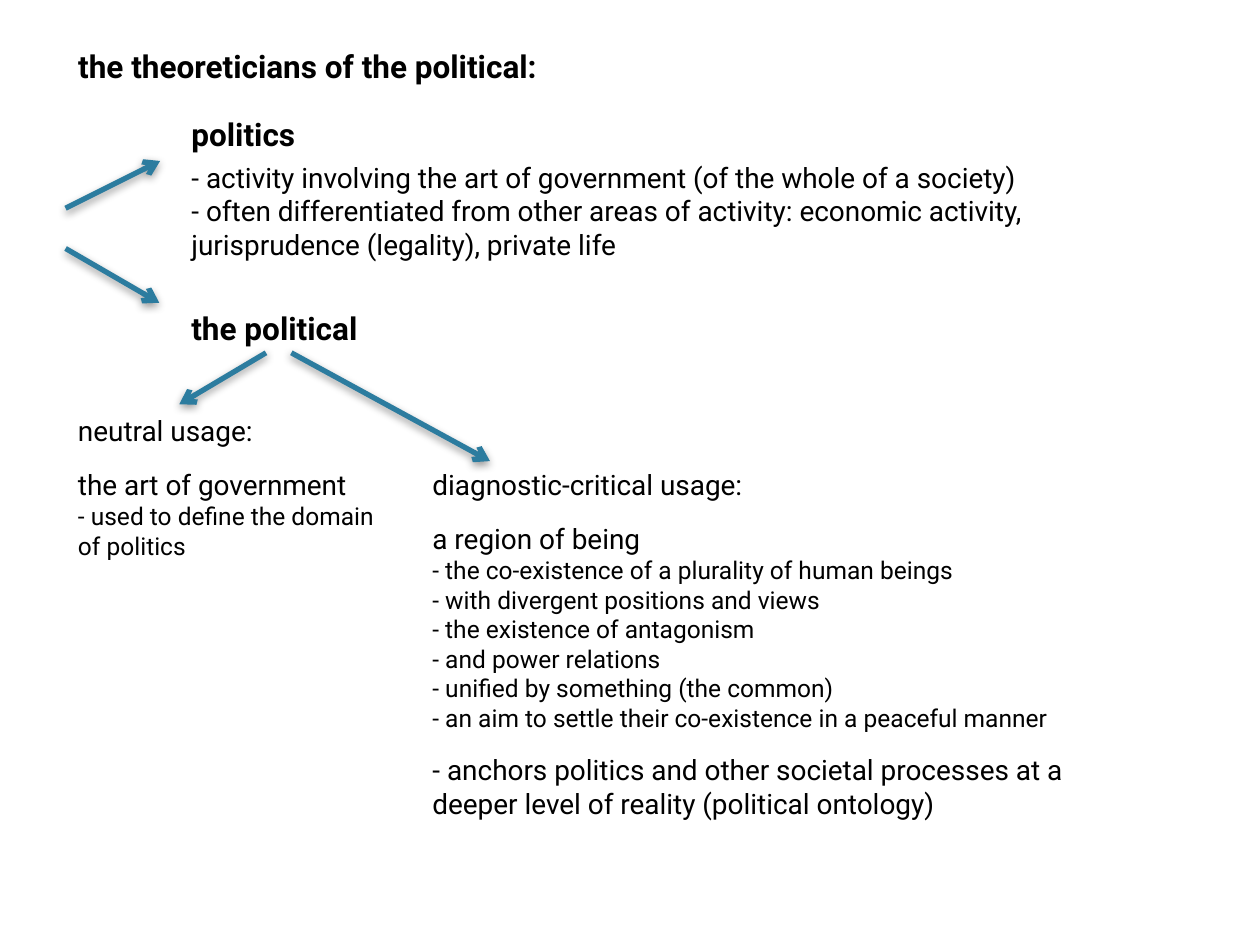
import pptx
import pptx.dml.color
import pptx.enum.shapes
import pptx.enum.text
import pptx.oxml
import pptx.oxml.ns
import pptx.util

Pt = pptx.util.Pt
BLACK = pptx.dml.color.RGBColor(0x00, 0x00, 0x00)
BLUE = pptx.dml.color.RGBColor(0x2C, 0x7C, 0x9F)
FONT = "Roboto"
HEADING, BODY, DETAIL = 18, 16, 14
GROUP_GAP = 12

TITLE_ONLY = 5
LEFT, INDENTED, RIGHT = 37.5, 102.3, 240

ARROW_SHADOW = (
    '<a:effectLst %s><a:outerShdw blurRad="%d" dist="%d" dir="5400000" rotWithShape="0">'
    '<a:srgbClr val="000000"><a:alpha val="40000"/></a:srgbClr>'
    '</a:outerShdw></a:effectLst>' % (pptx.oxml.ns.nsdecls("a"), Pt(5), Pt(2))
)
ARROW_HEAD = '<a:tailEnd %s type="arrow"/>' % pptx.oxml.ns.nsdecls("a")


def fill_text(shape, lines, bold=False):
    """Write (text, size, space before) lines into a shape."""
    text_frame = shape.text_frame
    text_frame.text = "\n".join(text for text, size, gap in lines)
    text_frame.word_wrap = True
    text_frame.auto_size = pptx.enum.text.MSO_AUTO_SIZE.SHAPE_TO_FIT_TEXT
    text_frame.vertical_anchor = pptx.enum.text.MSO_ANCHOR.TOP
    for paragraph, (text, size, gap) in zip(text_frame.paragraphs, lines):
        paragraph.alignment = pptx.enum.text.PP_ALIGN.LEFT
        paragraph.space_before = Pt(gap)
        font = paragraph.runs[0].font
        font.name = FONT
        font.size = Pt(size)
        font.bold = bold
        font.color.rgb = BLACK


def set_title(slide, text, left, top, width, height):
    title = slide.shapes.title
    title.left, title.top = Pt(left), Pt(top)
    title.width, title.height = Pt(width), Pt(height)
    fill_text(title, [(text, HEADING, 0)], bold=True)


def add_text(slide, lines, left, top, width, height, bold=False):
    shape = slide.shapes.add_textbox(Pt(left), Pt(top), Pt(width), Pt(height))
    fill_text(shape, lines, bold)


def add_arrow(slide, start, end):
    connector = slide.shapes.add_connector(
        pptx.enum.shapes.MSO_CONNECTOR.STRAIGHT,
        Pt(start[0]), Pt(start[1]), Pt(end[0]), Pt(end[1]))
    connector.line.color.rgb = BLUE
    connector.line.width = Pt(3)
    connector.line._get_or_add_ln().append(pptx.oxml.parse_xml(ARROW_HEAD))
    connector._element.spPr.append(pptx.oxml.parse_xml(ARROW_SHADOW))


def main():
    presentation = pptx.Presentation()
    presentation.slide_width, presentation.slide_height = Pt(720), Pt(540)
    slide = presentation.slides.add_slide(presentation.slide_layouts[TITLE_ONLY])
    set_title(slide, "the theoreticians of the political:", LEFT, 23, 315.5, 29)

    # Politics
    add_text(slide, [("politics", HEADING, 0)], INDENTED, 62, 532, 29, bold=True)
    add_text(slide, [
        ("- activity involving the art of government (of the whole of a society)", BODY, 0),
        ("- often differentiated from other areas of activity: economic activity, "
         "jurisprudence (legality), private life", BODY, 0),
    ], INDENTED, 88, 572.5, 65.5)

    # The political and its two usages
    add_text(slide, [("the political", HEADING, 0)], INDENTED, 173, 127.5, 29, bold=True)
    add_text(slide, [
        ("neutral usage:", BODY, 0),
        ("the art of government", BODY, GROUP_GAP),
        ("- used to define the domain of politics", DETAIL, 0),
    ], LEFT, 232.5, 191, 92)
    features = [
        "- the co-existence of a plurality of human beings",
        "- with divergent positions and views",
        "- the existence of antagonism",
        "- and power relations",
        "- unified by something (the common)",
        "- an aim to settle their co-existence in a peaceful manner",
    ]
    add_text(slide, [
        ("diagnostic-critical usage:", BODY, 0),
        ("a region of being", BODY, GROUP_GAP),
        *[(feature, DETAIL, 0) for feature in features],
        ("- anchors politics and other societal processes at a deeper level "
         "of reality (political ontology)", BODY, GROUP_GAP),
    ], RIGHT, 263.5, 417, 216)

    # Arrows to the two concepts, then to the two usages
    add_arrow(slide, (37.5, 119), (91.5, 92))
    add_arrow(slide, (37.5, 142), (91, 173))
    add_arrow(slide, (152, 201.6), (102.5, 231))
    add_arrow(slide, (166.5, 201.6), (280, 263.5))

    presentation.save("out.pptx")


if __name__ == "__main__":
    main()
